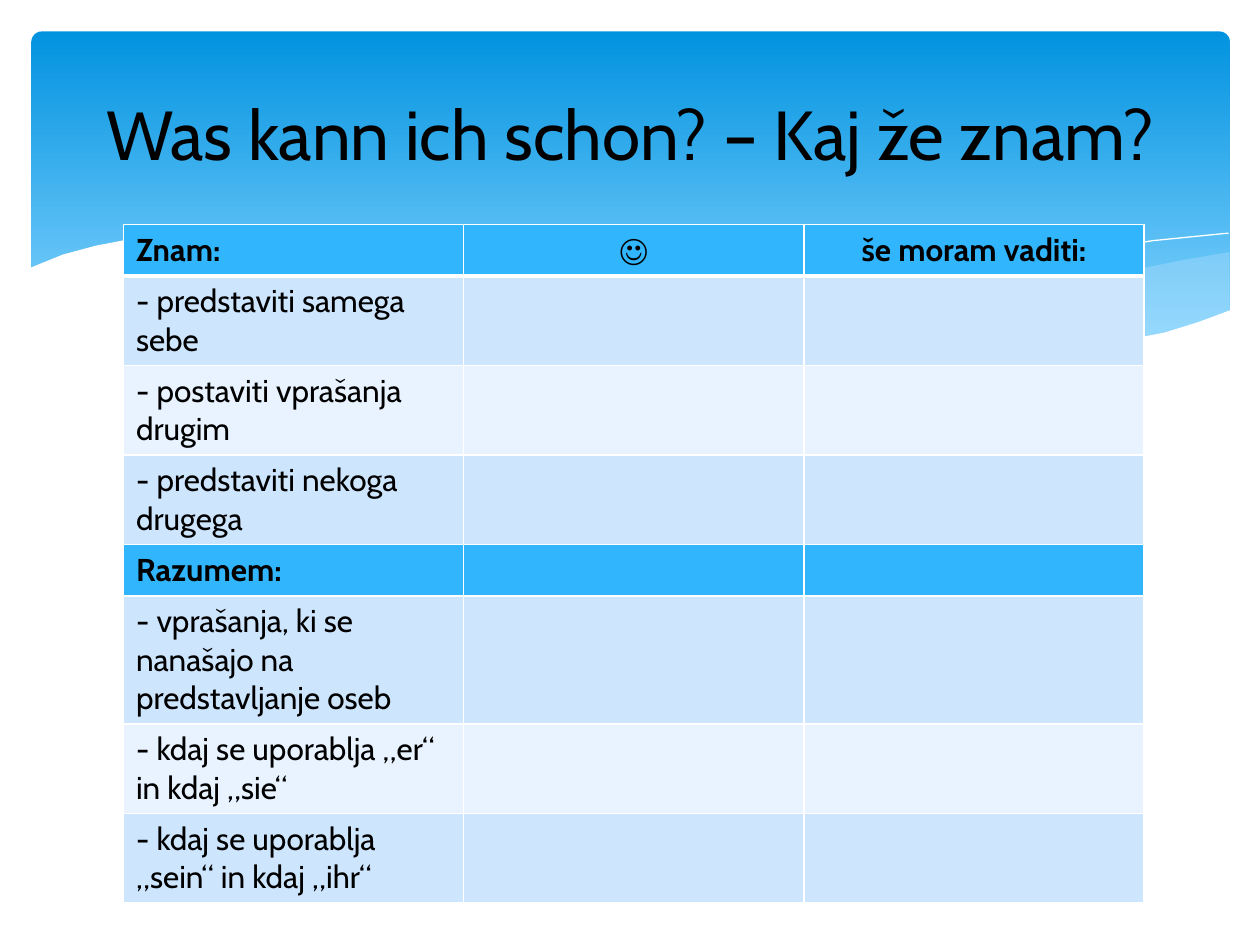
from lxml import etree
from pptx import Presentation, util as u
from pptx.dml.color import RGBColor
from pptx.enum import shapes, text
from pptx.oxml.ns import qn

FONT = "Cabin"
BLACK, WHITE, PALE_BLUE = "000000", "FFFFFF", "C6E7FC"
HEADING, STRIPES = "31B6FD", ("CEE5FE", "E8F3FF")


def rgb(value):
    return RGBColor.from_string(value)


def write(tf, words, size, align, bold=False):
    p = tf.paragraphs[0]
    p.alignment = align
    r = p.add_run()
    r.text = words
    r.font.name, r.font.size, r.font.bold = FONT, u.Pt(size), bold
    r.font.color.rgb = rgb(BLACK)


prs = Presentation()
prs.slide_width, prs.slide_height = u.Inches(10), u.Inches(7.5)
unit = prs.slide_width // 1000  # all lengths below are thousandths of the width
s = prs.slides.add_slide(prs.slide_layouts.get_by_name("Title Only"))

# Banner with a vertical gradient
banner = s.shapes.add_shape(shapes.MSO_SHAPE.ROUNDED_RECTANGLE,
                            25 * unit, 25 * unit, 951 * unit, 270 * unit)
banner.adjustments[0] = 0.03
banner.shadow.inherit = False
banner.line.fill.background()
banner.fill.gradient()
banner.fill.gradient_angle = 270
gradient = [(0, "0293E0"), (0.9, "83D3FE")]
for stop, (position, color) in zip(banner.fill.gradient_stops, gradient):
    stop.position = position
    stop.color.rgb = rgb(color)

# Waves over the banner's lower edge, from back to front.
# Each edge lists heights at equal steps from left to right;
# a wave with a lower edge is a filled area, one without is a thin line.
waves = [
    dict(left=661, right=976, color=PALE_BLUE, opacity=29,
         upper=[265, 259, 253, 245, 238, 229, 221, 213, 206, 200],
         lower=[265, 270, 274, 277, 278, 277, 274, 269, 260, 247]),
    dict(left=286, right=893, color=PALE_BLUE, opacity=40,
         upper=[191, 186, 186, 192, 201, 212, 227, 241, 253, 264, 273],
         lower=[191, 200, 212, 227, 240, 253, 264, 272, 277, 278, 273]),
    dict(left=309, right=907, color=WHITE, opacity=100,
         upper=[195, 188, 187, 190, 196, 204, 214, 226, 239, 255, 272],
         lower=[]),
    dict(left=613, right=975, color=WHITE, opacity=100,
         upper=[257, 241, 226, 213, 201, 191, 185],
         lower=[]),
    dict(left=23, right=977, color=WHITE, opacity=100,
         upper=[213, 202, 195, 190, 186, 184, 184, 184, 185, 187, 190, 193,
                197, 202, 208, 214, 220, 227, 232, 239, 245, 250, 255, 259,
                264, 268, 271, 273, 275, 276, 277, 276, 273, 269, 264, 256,
                246],
         lower=[329, 329]),
]
for wave in waves:
    left, right = wave["left"], wave["right"]
    upper, lower = (
        [(round(left + (right - left) * i / (len(heights) - 1)), y)
         for i, y in enumerate(heights)]
        for heights in (wave["upper"], wave["lower"]))
    outline = upper + lower[::-1]
    builder = s.shapes.build_freeform(*outline[0], scale=unit)
    builder.add_line_segments(outline[1:], close=bool(lower))
    sp = builder.convert_to_shape()
    sp.shadow.inherit = False
    if lower:
        sp.line.fill.background()
        sp.fill.solid()
        sp.fill.fore_color.rgb = rgb(wave["color"])
        color = sp._element.spPr.find(qn("a:solidFill"))[0]
        etree.SubElement(color, qn("a:alpha"), val=str(wave["opacity"] * 1000))
    else:
        sp.fill.background()
        sp.line.color.rgb = rgb(wave["color"])
        sp.line.width = 0

# Checklist: each section is a heading row followed by striped skill rows
sections = [
    (["Znam:", "☺", "še moram vaditi:"],
     ["- predstaviti samega sebe",
      "- postaviti vprašanja drugim",
      "- predstaviti nekoga drugega"]),
    (["Razumem:", "", ""],
     ["- vprašanja, ki se nanašajo na predstavljanje oseb",
      "- kdaj se uporablja „er“ in kdaj „sie“",
      "- kdaj se uporablja „sein“ in kdaj „ihr“"]),
]
rows = []
for headings, skills in sections:
    rows.append((headings, HEADING))
    for i, skill in enumerate(skills):
        rows.append(([skill, "", ""], STRIPES[i % 2]))

row_height = 41 * unit
table = s.shapes.add_table(len(rows), 3, 98 * unit, 178 * unit,
                           810 * unit, len(rows) * row_height).table
for i, (row, color) in enumerate(rows):
    table.rows[i].height = row_height
    for j, words in enumerate(row):
        cell = table.cell(i, j)
        cell.fill.solid()
        cell.fill.fore_color.rgb = rgb(color)
        if words:
            align = text.PP_ALIGN.CENTER if j else text.PP_ALIGN.LEFT
            write(cell.text_frame, words, 18, align, bold=color == HEADING)
        for k, side in enumerate(("lnL", "lnR", "lnT", "lnB")):
            below_header = (i, side) in ((0, "lnB"), (1, "lnT"))
            ln = etree.Element(qn("a:" + side),
                               w=str(u.Pt(3 if below_header else 1)))
            fill = etree.SubElement(ln, qn("a:solidFill"))
            etree.SubElement(fill, qn("a:srgbClr"), val=WHITE)
            cell._tc.tcPr.insert(k, ln)  # borders come before the fill

# Title, moved in front of the banner
title = s.shapes.title
title.left, title.top = 50 * unit, 37 * unit
title.width, title.height = 900 * unit, 137 * unit
title.text_frame.vertical_anchor = text.MSO_ANCHOR.MIDDLE
write(title.text_frame, "Was kann ich schon? – Kaj že znam?", 39.6,
      text.PP_ALIGN.CENTER)
s.shapes._spTree.append(title._element)

prs.save("out.pptx")
